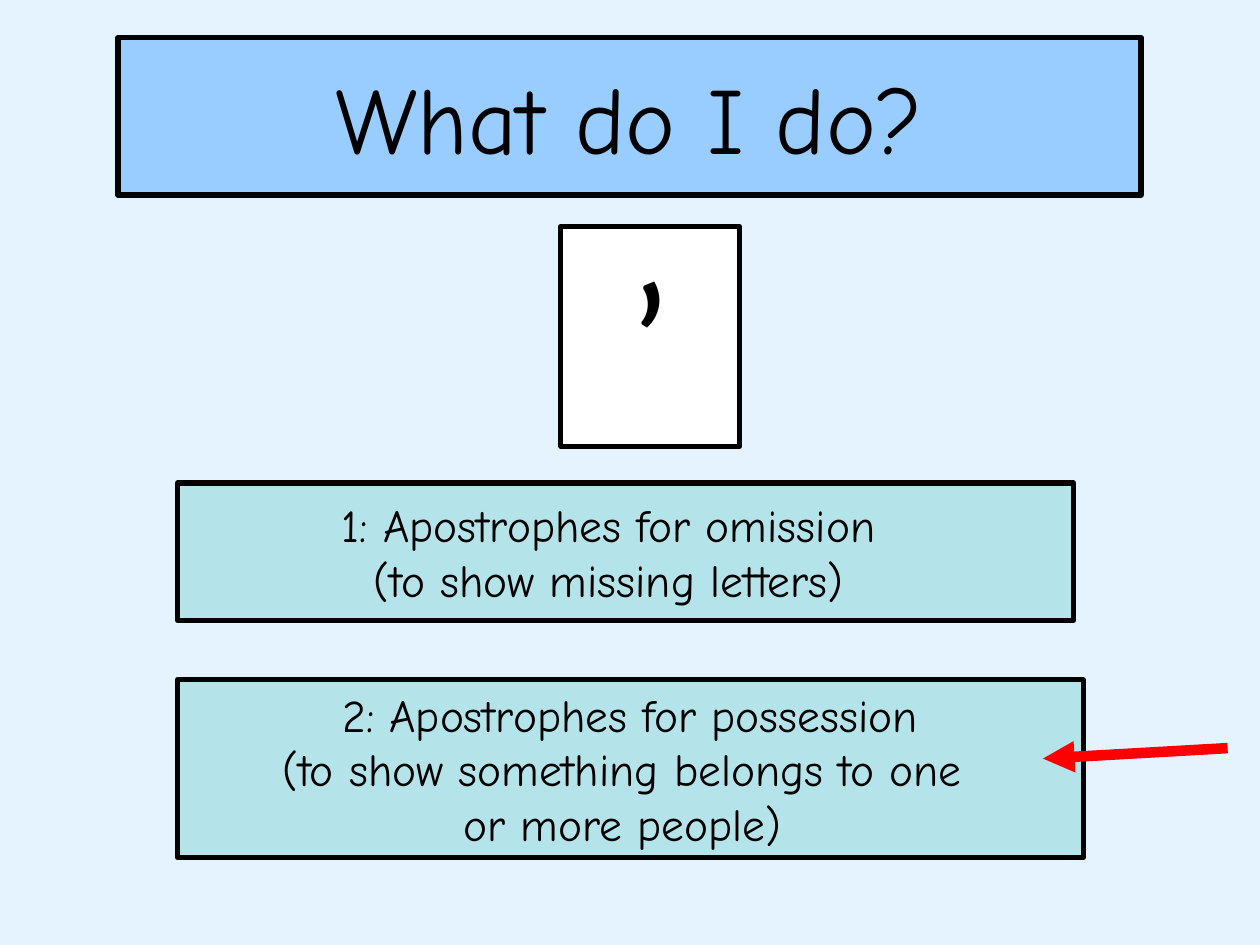
from dataclasses import dataclass

from lxml import etree
from pptx import Presentation
from pptx.dml.color import RGBColor
from pptx.enum import shapes, text
from pptx.oxml import ns
from pptx.util import Pt


@dataclass(frozen=True)
class Theme:
    page: str = "E5F2FF"
    title: str = "99CCFF"
    card: str = "FFFFFF"
    rule: str = "B4E4EA"
    ink: str = "000000"
    arrow: str = "FF0000"
    font: str = "Comic Neue"
    mark_font: str = "Calibri"
    title_size: int = 54
    mark_size: int = 96
    rule_size: int = 26
    outline: int = 3
    arrow_width: int = 6


class SlideBuilder:
    def __init__(self, page, theme):
        self.page = page
        self.theme = theme
        fill = page.background.fill
        fill.solid()
        fill.fore_color.rgb = RGBColor.from_string(theme.page)

    def panel(self, place, lines, fill, size, font=None,
              anchor=text.MSO_ANCHOR.MIDDLE):
        """Add an outlined rectangle; each line is (words, right margin)."""
        box = self.page.shapes.add_shape(
            shapes.MSO_SHAPE.RECTANGLE, *map(Pt, place))
        box.shadow.inherit = False
        box.fill.solid()
        box.fill.fore_color.rgb = RGBColor.from_string(fill)
        box.line.color.rgb = RGBColor.from_string(self.theme.ink)
        box.line.width = Pt(self.theme.outline)
        frame = box.text_frame
        frame.word_wrap = True
        frame.vertical_anchor = anchor
        for index, (words, margin) in enumerate(lines):
            para = frame.paragraphs[0] if index == 0 else frame.add_paragraph()
            para.text = words
            para.alignment = text.PP_ALIGN.CENTER
            para.font.name = font or self.theme.font
            para.font.size = Pt(size)
            para.font.color.rgb = RGBColor.from_string(self.theme.ink)
            if margin:
                para._p.get_or_add_pPr().set("marR", str(Pt(margin)))

    def arrow(self, start, end):
        line = self.page.shapes.add_connector(
            shapes.MSO_CONNECTOR.STRAIGHT, *map(Pt, start + end))
        line.line.color.rgb = RGBColor.from_string(self.theme.arrow)
        line.line.width = Pt(self.theme.arrow_width)
        etree.SubElement(line.line._get_or_add_ln(), ns.qn("a:tailEnd"),
                         type="triangle")
        etree.SubElement(line._element.spPr, ns.qn("a:effectLst"))


def main():
    theme = Theme()
    deck = Presentation()
    deck.slide_width, deck.slide_height = Pt(720), Pt(540)
    slide = SlideBuilder(deck.slides.add_slide(deck.slide_layouts[6]), theme)

    slide.panel((67.5, 21.5, 584.5, 90), [("What do I do?", 0)],
                theme.title, theme.title_size)
    slide.panel((320.5, 129.5, 102, 125.5), [("’", 0)], theme.card,
                theme.mark_size, theme.mark_font, text.MSO_ANCHOR.TOP)
    slide.panel((101.5, 276, 512, 78.5),
                [("1: Apostrophes for omission", 19),
                 ("(to show missing letters)", 0)],
                theme.rule, theme.rule_size)
    slide.panel((101.5, 388.5, 517.5, 101.5),
                [("2: Apostrophes for possession", 0),
                 ("(to show something belongs to one", 9),
                 ("or more people)", 0)],
                theme.rule, theme.rule_size)
    slide.arrow((701.5, 427.5), (596, 433.5))

    deck.save("out.pptx")


if __name__ == "__main__":
    main()
